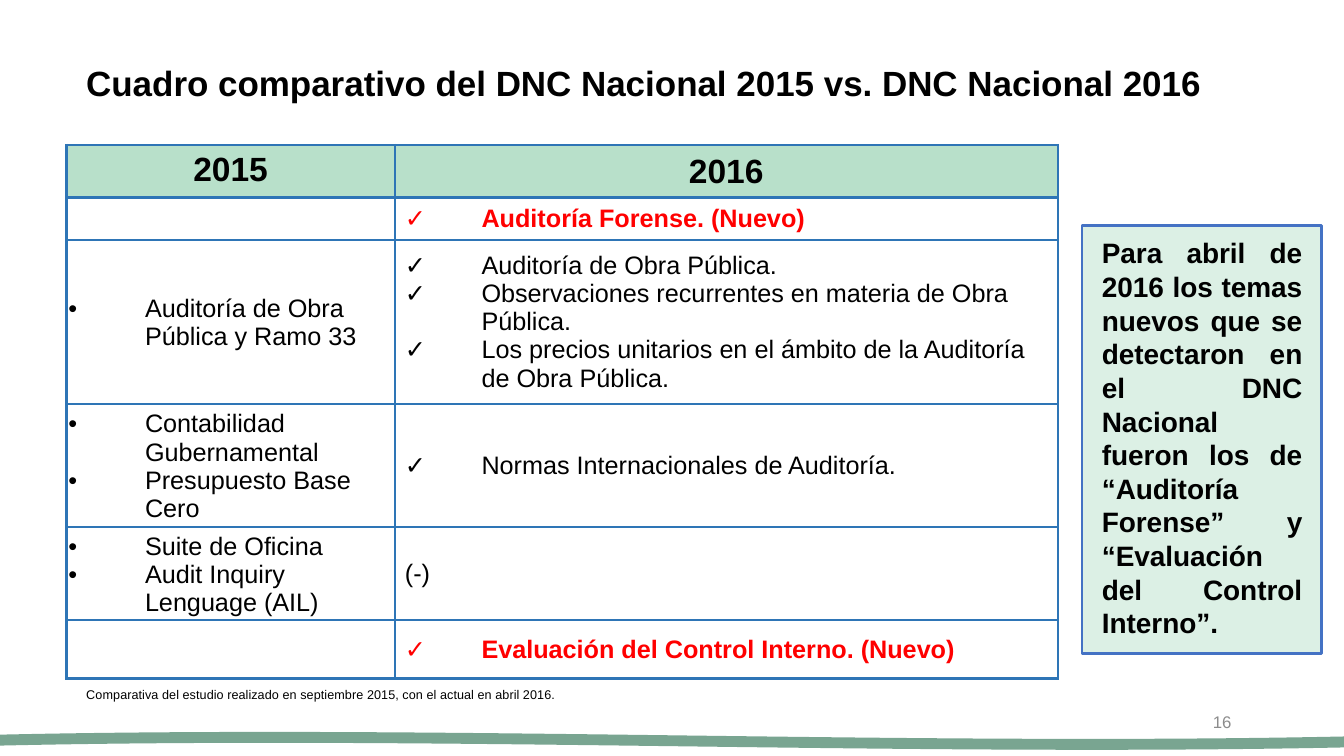
from dataclasses import dataclass
from lxml.etree import SubElement
from pptx import Presentation
from pptx.dml.color import RGBColor
from pptx.enum.shapes import MSO_SHAPE
from pptx.enum.text import MSO_ANCHOR, PP_ALIGN
from pptx.oxml import parse_xml
from pptx.oxml.ns import nsdecls, qn
from pptx.util import Inches, Pt


@dataclass(frozen=True)
class Theme:
    font: str = "Arial"
    black: str = "000000"
    new: str = "FF0000"
    number: str = "8C8C8C"
    header: str = "B8E0CA"
    note: str = "DCF0E5"
    note_line: str = "4472C4"
    border: str = "2E75B6"
    wave: str = "79A591"
    title_size: float = 12.5
    header_size: float = 12
    note_size: float = 10
    body_size: float = 9
    number_size: float = 6
    source_size: float = 4.5


THEME = Theme()
COLUMNS = [1.63, 3.29]
ROWS = [0.25, 0.21, 0.8, 0.46, 0.46, 0.29]
TOPICS = [
    ([], ["Auditoría Forense. (Nuevo)"]),
    (["Auditoría de Obra Pública y Ramo 33"],
     ["Auditoría de Obra Pública.",
      "Observaciones recurrentes en materia de Obra Pública.",
      "Los precios unitarios en el ámbito de la Auditoría de Obra Pública."]),
    (["Contabilidad Gubernamental", "Presupuesto Base Cero"],
     ["Normas Internacionales de Auditoría."]),
    (["Suite de Oficina", "Audit Inquiry Lenguage (AIL)"], ["(-)"]),
    ([], ["Evaluación del Control Interno. (Nuevo)"]),
]
NOTE = ("Para abril de 2016 los temas nuevos que se detectaron en el DNC Nacional "
        "fueron los de “Auditoría Forense” y “Evaluación del Control Interno”.")


def style(para, size, color=THEME.black, bold=False, align=PP_ALIGN.LEFT):
    para.alignment = align
    for span in para.runs:
        span.font.name = THEME.font
        span.font.size = Pt(size)
        span.font.bold = bold
        span.font.color.rgb = RGBColor.from_string(color)


def paint(target, color):
    target.fill.solid()
    target.fill.fore_color.rgb = RGBColor.from_string(color)


def add_text(page, place, text, size, anchor=MSO_ANCHOR.TOP, spacing=1.0, **look):
    box = page.shapes.add_textbox(*map(Inches, place))
    frame = box.text_frame
    frame.word_wrap = True
    frame.vertical_anchor = anchor
    frame.text = text
    para = frame.paragraphs[0]
    para.line_spacing = spacing
    style(para, size, **look)


def add_block(page, kind, place, fill, line=None):
    shape = page.shapes.add_shape(kind, *map(Inches, place))
    shape.shadow.inherit = False
    paint(shape, fill)
    if line:
        shape.line.color.rgb = RGBColor.from_string(line)
        shape.line.width = Pt(1)
    else:
        shape.line.fill.background()
    return shape


def add_note(page):
    frame = add_block(page, MSO_SHAPE.RECTANGLE, (5.37, 1.12, 1.19, 2.12),
                      THEME.note, THEME.note_line).text_frame
    frame.word_wrap = True
    frame.vertical_anchor = MSO_ANCHOR.TOP
    frame.text = NOTE
    style(frame.paragraphs[0], THEME.note_size, bold=True, align=PP_ALIGN.JUSTIFY)


def add_bullet(para, mark):
    properties = para._p.get_or_add_pPr()
    properties.set("marL", str(Inches(0.38)))
    properties.set("indent", str(-Inches(0.38)))
    SubElement(properties, qn("a:buFont"), typeface=THEME.font)
    SubElement(properties, qn("a:buChar"), char=mark)


def add_borders(cell):
    properties = cell._tc.get_or_add_tcPr()
    for position, side in enumerate("LRTB"):
        properties.insert(position, parse_xml(
            f'<a:ln{side} {nsdecls("a")} w="{Pt(1)}"><a:solidFill>'
            f'<a:srgbClr val="{THEME.border}"/></a:solidFill></a:ln{side}>'))


def set_margins(cell, side, top, bottom):
    cell.margin_left = cell.margin_right = Inches(side)
    cell.margin_top = Inches(top)
    cell.margin_bottom = Inches(bottom)


def fill_header(cell, year, anchor):
    paint(cell, THEME.header)
    set_margins(cell, 0.05, 0.03, 0.03)
    cell.vertical_anchor = anchor
    cell.text_frame.text = year
    style(cell.text_frame.paragraphs[0], THEME.header_size, bold=True, align=PP_ALIGN.CENTER)


def fill_topics(cell, topics, mark):
    cell.fill.background()
    cell.vertical_anchor = MSO_ANCHOR.MIDDLE
    cell.text_frame.text = "\n".join(topics)
    for para in cell.text_frame.paragraphs:
        is_new = para.text.endswith("(Nuevo)")
        style(para, THEME.body_size, THEME.new if is_new else THEME.black, is_new)
        if not para.text:
            SubElement(para._p, qn("a:endParaRPr"), sz=str(THEME.body_size * 100))
        elif para.text != "(-)":
            add_bullet(para, mark)


def add_comparison(page):
    table = page.shapes.add_table(len(ROWS), len(COLUMNS), Inches(0.33), Inches(0.72),
                                  Inches(sum(COLUMNS)), Inches(sum(ROWS))).table
    for column, width in zip(table.columns, COLUMNS):
        column.width = Inches(width)
    for row, height in zip(table.rows, ROWS):
        row.height = Inches(height)
    fill_header(table.cell(0, 0), "2015", MSO_ANCHOR.TOP)
    fill_header(table.cell(0, 1), "2016", MSO_ANCHOR.MIDDLE)
    for index, (before, after) in enumerate(TOPICS, 1):
        set_margins(table.cell(index, 0), 0.01, 0.01, 0)
        set_margins(table.cell(index, 1), 0.05, 0.03, 0.03)
        fill_topics(table.cell(index, 0), before, "•")
        fill_topics(table.cell(index, 1), after, "✓")
    for cell in table.iter_cells():
        add_borders(cell)


def main():
    deck = Presentation()
    deck.slide_width = Inches(6.67)
    deck.slide_height = Inches(3.75)
    page = deck.slides.add_slide(deck.slide_layouts[6])
    add_text(page, (0.33, 0.11, 5.8, 0.62),
             "Cuadro comparativo del DNC Nacional 2015 vs. DNC Nacional 2016",
             THEME.title_size, MSO_ANCHOR.MIDDLE, 0.9, bold=True)
    add_comparison(page)
    add_text(page, (0.33, 3.36, 5.9, 0.18),
             "Comparativa del estudio realizado en septiembre 2015, con el actual en abril 2016.",
             THEME.source_size)
    add_text(page, (4.71, 3.48, 1.5, 0.2), "16", THEME.number_size, MSO_ANCHOR.MIDDLE,
             color=THEME.number, align=PP_ALIGN.RIGHT)
    add_note(page)
    wave = add_block(page, MSO_SHAPE.WAVE, (-0.15, 3.63, 7.06, 0.09), THEME.wave)
    wave.adjustments[0] = 0.2
    wave.adjustments[1] = 0
    deck.save("out.pptx")


if __name__ == "__main__":
    main()
